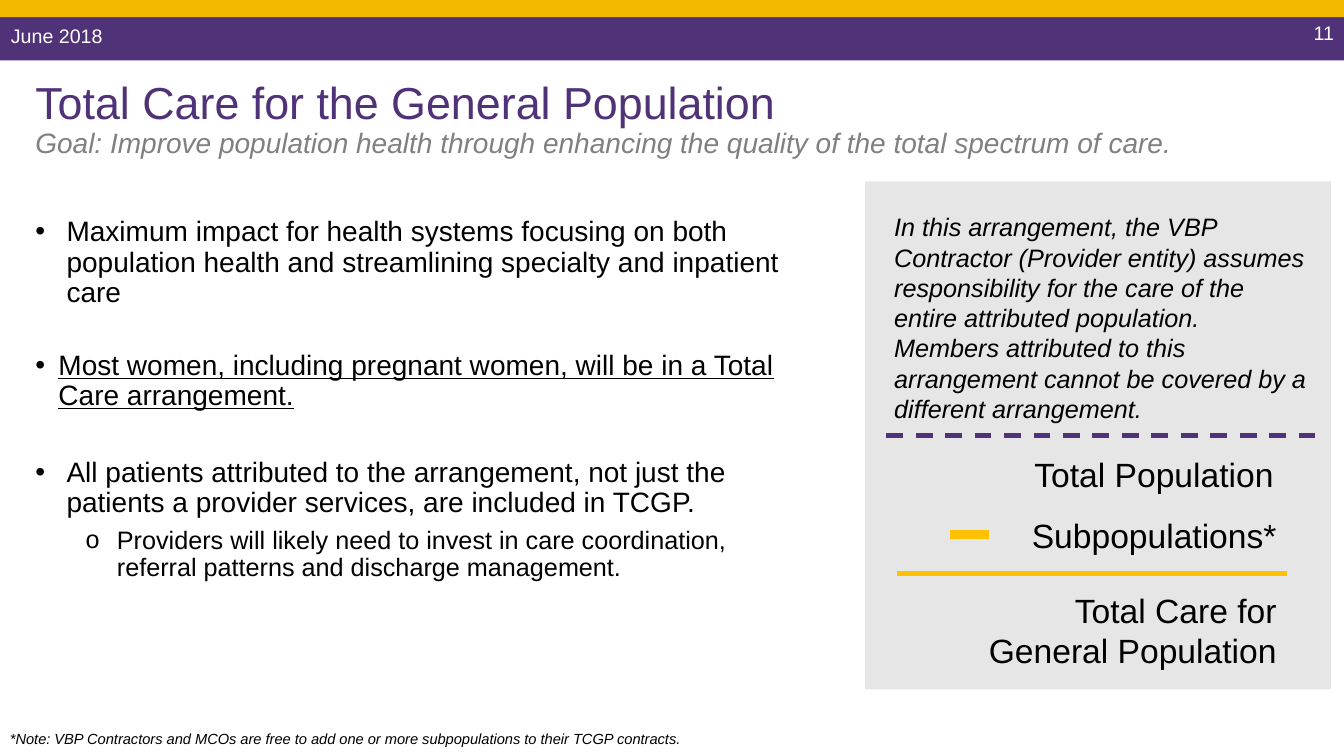
from dataclasses import dataclass

from lxml.etree import SubElement
from pptx import Presentation
from pptx.dml.color import RGBColor
from pptx.enum.dml import MSO_LINE
from pptx.enum.shapes import MSO_CONNECTOR, MSO_SHAPE
from pptx.enum.text import MSO_ANCHOR, MSO_AUTO_SIZE, PP_ALIGN
from pptx.oxml.ns import qn
from pptx.util import Inches, Pt


@dataclass(frozen=True)
class Theme:
    font: str = "Arial"
    purple: str = "503278"
    gold: str = "F2B800"
    amber: str = "FFC000"
    panel: str = "E7E6E6"
    grey: str = "808080"
    black: str = "000000"
    white: str = "FFFFFF"
    title: float = 32
    sum: float = 24
    body: float = 20
    detail: float = 18
    header: float = 14
    note: float = 10.5


class SlideBuilder:
    def __init__(self, page, theme):
        self.page = page
        self.theme = theme

    def place(self, shape, area):
        shape.left, shape.top, shape.width, shape.height = map(Inches, area)

    def span(self, para, text, size, color, italic=False, underline=False):
        span = para.add_run()
        span.text = text
        font = span.font
        font.name = self.theme.font
        font.size = Pt(size)
        font.color.rgb = RGBColor.from_string(color)
        font.italic = italic
        font.underline = underline

    def shape(self, kind, area, fill, outlined=False):
        shape = self.page.shapes.add_shape(kind, *map(Inches, area))
        shape.shadow.inherit = False
        shape.fill.solid()
        shape.fill.fore_color.rgb = RGBColor.from_string(fill)
        if outlined:
            shape.line.color.rgb = RGBColor.from_string(fill)
            shape.line.width = Pt(1)
        else:
            shape.line.fill.background()

    def text(self, area, text, size, color, align=PP_ALIGN.LEFT, italic=False):
        box = self.page.shapes.add_textbox(*map(Inches, area))
        box.text_frame.word_wrap = True
        para = box.text_frame.paragraphs[0]
        para.alignment = align
        self.span(para, text, size, color, italic)

    def line(self, left, right, y, color, dash=None):
        line = self.page.shapes.add_connector(
            MSO_CONNECTOR.STRAIGHT, Inches(left), Inches(y), Inches(right), Inches(y))
        line.line.color.rgb = RGBColor.from_string(color)
        line.line.width = Pt(3)
        if dash:
            line.line.dash_style = dash
        SubElement(line._element.spPr, qn("a:effectLst"))

    def placeholder(self, shape, area):
        self.place(shape, area)
        frame = shape.text_frame
        frame.word_wrap = True
        frame.auto_size = MSO_AUTO_SIZE.NONE
        frame.vertical_anchor = MSO_ANCHOR.TOP
        return frame

    def title(self, area, heading, goal):
        frame = self.placeholder(self.page.shapes.title, area)
        para = frame.paragraphs[0]
        para.alignment = PP_ALIGN.LEFT
        para.line_spacing = 0.9
        self.span(para, heading, self.theme.title, self.theme.purple)
        para.add_line_break()
        self.span(para, goal, self.theme.body, self.theme.grey, italic=True)

    def bullets(self, area, items):
        frame = self.placeholder(self.page.placeholders[1], area)
        for index, (text, level, margin, hang, before, underline) in enumerate(items):
            para = frame.add_paragraph() if index else frame.paragraphs[0]
            para.level = level
            para.line_spacing = 0.9
            para.space_before = Pt(before)
            props = para._p.get_or_add_pPr()
            props.set("marL", str(Inches(margin)))
            props.set("indent", str(-Inches(hang)))
            SubElement(props, qn("a:buFont"), typeface=self.theme.font)
            SubElement(props, qn("a:buChar"), char="o" if level else "•")
            size = self.theme.detail if level else self.theme.body
            self.span(para, text, size, self.theme.black, underline=underline)


def main():
    deck = Presentation()
    deck.slide_width, deck.slide_height = Inches(13.33), Inches(7.5)
    theme = Theme()
    slide = SlideBuilder(deck.slides.add_slide(deck.slide_layouts[1]), theme)

    # Header band
    slide.shape(MSO_SHAPE.RECTANGLE, (0, 0.17, 13.33, 0.43), theme.purple)
    slide.shape(MSO_SHAPE.RECTANGLE, (0, 0, 13.33, 0.17), theme.gold)
    slide.text((9.92, 0.16, 3.41, 0.34), "11", theme.header, theme.white, PP_ALIGN.RIGHT)
    slide.text((0.01, 0.19, 5.36, 0.34), "June 2018", theme.header, theme.white)

    # Title and goal
    slide.title(
        (0.25, 0.75, 12.66, 0.55),
        "Total Care for the General Population",
        "Goal: Improve population health through enhancing the quality of the total "
        "spectrum of care.")

    # Bullets: text, level, margin, hanging indent, space before, underline
    slide.bullets((0.25, 2.11, 7.89, 4), [
        ("Maximum impact for health systems focusing on both population health and "
         "streamlining specialty and inpatient care", 0, 0.31, 0.31, 0, False),
        ("Most women, including pregnant women, will be in a Total Care arrangement.",
         0, 0.23, 0.23, 30.5, True),
        ("All patients attributed to the arrangement, not just the patients a provider "
         "services, are included in TCGP.", 0, 0.31, 0.31, 33.5, False),
        ("Providers will likely need to invest in care coordination, referral patterns "
         "and discharge management.", 1, 0.81, 0.31, 6, False),
    ])

    # Side panel with explanation
    slide.shape(MSO_SHAPE.RECTANGLE, (8.58, 1.8, 4.62, 5.04), theme.panel)
    slide.text(
        (8.77, 2.05, 4.32, 2.22),
        "In this arrangement, the VBP Contractor (Provider entity) assumes responsibility "
        "for the care of the entire attributed population. Members attributed to this "
        "arrangement cannot be covered by a different arrangement.",
        theme.detail, theme.black, italic=True)
    slide.line(8.79, 13.07, 4.32, theme.purple, MSO_LINE.DASH)

    # Subtraction of populations
    for left, top, height, label in [
        (9.43, 4.45, 0.5, "Total Population"),
        (9.46, 5.06, 0.5, "Subpopulations*"),
        (9.46, 5.8, 0.91, "Total Care for General Population"),
    ]:
        slide.text((left, top, 3.3, height), label, theme.sum, theme.black, PP_ALIGN.RIGHT)
    slide.shape(MSO_SHAPE.MATH_MINUS, (9.36, 5.14, 0.51, 0.33), theme.amber, outlined=True)
    slide.line(8.9, 12.76, 5.69, theme.amber)

    # Footnote
    slide.text(
        (0, 7.19, 7.4, 0.28),
        "*Note: VBP Contractors and MCOs are free to add one or more subpopulations to "
        "their TCGP contracts.", theme.note, theme.black, italic=True)

    deck.save("out.pptx")


if __name__ == "__main__":
    main()
